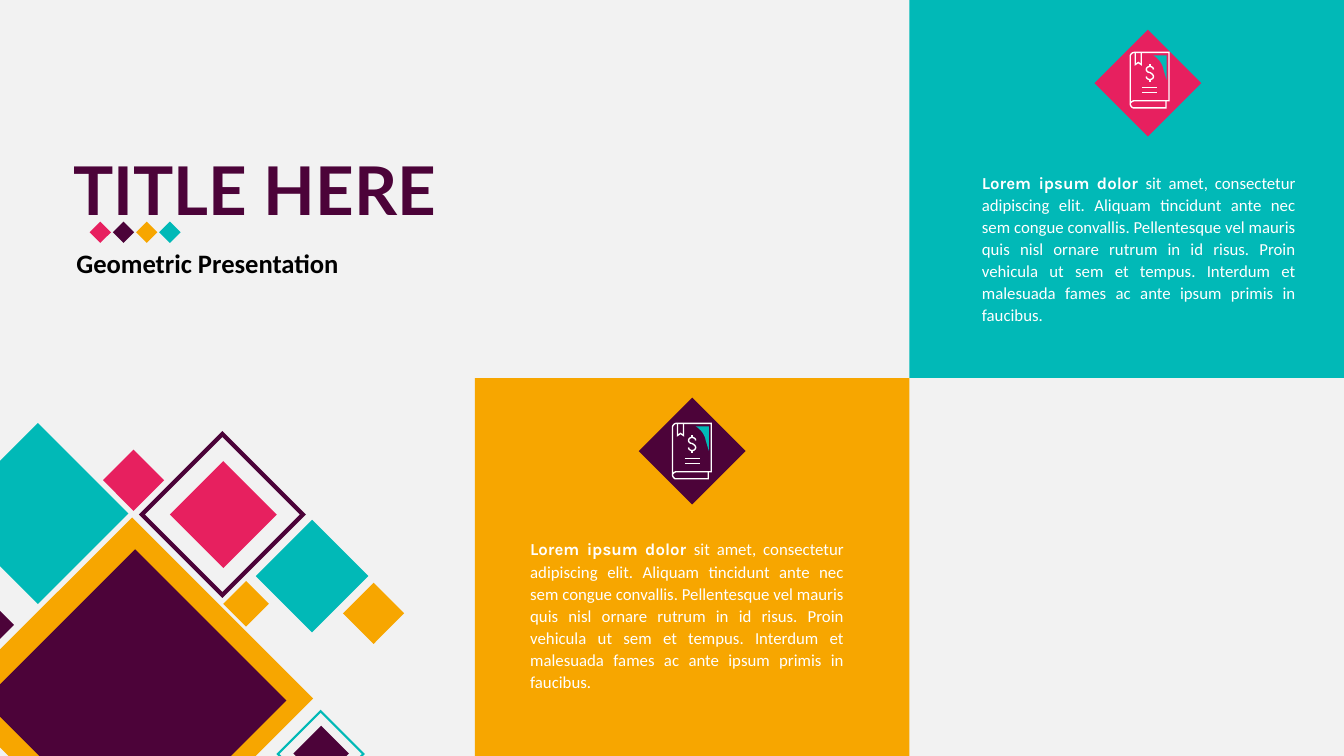
import pptx
import pptx.util
import pptx.dml.color
import pptx.enum.shapes
import pptx.enum.text
import pptx.oxml.ns
from dataclasses import dataclass
from lxml import etree

Inches = pptx.util.Inches
Pt = pptx.util.Pt
RECT = pptx.enum.shapes.MSO_SHAPE.RECTANGLE
STRAIGHT = pptx.enum.shapes.MSO_CONNECTOR.STRAIGHT
qn = pptx.oxml.ns.qn


@dataclass(frozen=True)
class Theme:
    paper: str = "F2F2F2"
    plum: str = "4C0339"
    amber: str = "F7A600"
    teal: str = "01B9B7"
    pink: str = "E7205F"
    white: str = "FFFFFF"
    black: str = "000000"
    title_font: str = "Lato"
    lead_font: str = "Karla"
    body_font: str = "Calibri"
    title_size: float = 48
    subtitle_size: float = 19
    body_size: float = 12
    icon_line: float = 1


T = Theme()

LEAD = "Lorem ipsum dolor "
BODY = ("sit amet, consectetur adipiscing elit. Aliquam tincidunt ante nec sem "
        "congue convallis. Pellentesque vel mauris quis nisl ornare rutrum in id "
        "risus. Proin vehicula ut sem et tempus. Interdum et malesuada fames ac "
        "ante ipsum primis in faucibus.")

# left, top, side, fill, line colour, line width
MOSAIC = [
    (0.04, 5.66, 2.54, T.amber, None, 0),
    (-1.02, 5.72, 0.96, T.plum, None, 0),
    (-0.26, 4.46, 1.27, T.teal, None, 0),
    (1.64, 4.54, 1.13, None, T.plum, 3),
    (2.28, 5.83, 0.32, T.amber, None, 0),
    (3.49, 5.87, 0.43, T.amber, None, 0),
    (1.11, 4.55, 0.43, T.pink, None, 0),
    (2.7, 5.32, 0.79, T.teal, None, 0),
    (2.88, 7.18, 0.6, None, T.teal, 1.5),
    (2.99, 7.28, 0.39, T.plum, None, 0),
    (0.3, 5.91, 2.08, T.plum, T.plum, 3),
    (1.84, 4.73, 0.75, T.pink, None, 0),
]

# Book icon outlines: a start point, then lines (one point) or curves (three points)
DOLLAR = [(0.16, 0.24), [(0.16, 0.26), (0.18, 0.27), (0.195, 0.27)],
          [(0.21, 0.27), (0.23, 0.26), (0.23, 0.24)],
          [(0.23, 0.22), (0.21, 0.21), (0.195, 0.2)],
          [(0.18, 0.2), (0.16, 0.19), (0.16, 0.17)],
          [(0.16, 0.15), (0.18, 0.14), (0.195, 0.14)],
          [(0.21, 0.14), (0.23, 0.15), (0.23, 0.17)]]
RIBBON = [(0.05, 0), [(0.05, 0.12)], [(0.08, 0.1)], [(0.11, 0.12)], [(0.11, 0)]]
COVER = [(0.04, 0), [(0.02, 0), (0, 0.02), (0, 0.04)], [(0, 0.51)],
         [(0, 0.5), (0.02, 0.48), (0.04, 0.48)], [(0.385, 0.48)], [(0.385, 0)]]
PAGES = [(0, 0.51), [(0, 0.53), (0.02, 0.55), (0.03, 0.55)],
         [(0.355, 0.55)], [(0.355, 0.48)]]
CORNER = [(0.36, 0.27), [(0.36, 0.03)], [(0.23, 0.03)],
          [(0.28, 0.06), (0.32, 0.11), (0.33, 0.17)]]
STROKES = [(0.195, 0.12, 0.195, 0.14), (0.195, 0.27, 0.195, 0.29),
           (0.12, 0.35, 0.27, 0.35), (0.12, 0.4, 0.27, 0.4)]


def rgb(color):
    return pptx.dml.color.RGBColor.from_string(color)


def paint(sp, fill=None, line=None, width=0):
    sp.shadow.inherit = False
    if fill:
        sp.fill.solid()
        sp.fill.fore_color.rgb = rgb(fill)
    else:
        sp.fill.background()
    if line:
        sp.line.color.rgb = rgb(line)
        sp.line.width = Pt(width)
        etree.SubElement(sp.line._get_or_add_ln(), qn("a:miter"), lim="800000")
    else:
        sp.line.fill.background()


def add_square(shapes, x, y, side, fill, line=None, width=0):
    """Add a square standing on its corner."""
    sp = shapes.add_shape(RECT, Inches(x), Inches(y), Inches(side), Inches(side))
    sp.rotation = 45
    paint(sp, fill, line, width)


def add_run(p, text, font, size, color, bold):
    r = p.add_run()
    r.text = text
    r.font.name, r.font.size, r.font.bold = font, Pt(size), bold
    r.font.color.rgb = rgb(color)


def add_text(shapes, x, y, w, h, wrap):
    """Add an empty text box and return its first paragraph."""
    tf = shapes.add_textbox(Inches(x), Inches(y), Inches(w), Inches(h)).text_frame
    tf.word_wrap = wrap
    tf.auto_size = pptx.enum.text.MSO_AUTO_SIZE.SHAPE_TO_FIT_TEXT
    return tf.paragraphs[0]


def trace(outline, steps=8):
    """Return the points of an outline, with its curves cut into short lines."""
    points = [outline[0]]
    for segment in outline[1:]:
        if len(segment) == 1:
            points += segment
            continue
        a, (b, c, d) = points[-1], segment
        for i in range(1, steps + 1):
            t = i / steps
            u = 1 - t
            points.append(tuple(u**3 * a[k] + 3*u*u*t * b[k] + 3*u*t*t * c[k] + t**3 * d[k]
                                for k in (0, 1)))
    return points


def add_outline(shapes, x, y, outline, closed, fill=None, line=None):
    points = [(Inches(x + px), Inches(y + py)) for px, py in trace(outline)]
    builder = shapes.build_freeform(*points[0])
    builder.add_line_segments(points[1:], close=closed)
    paint(builder.convert_to_shape(), fill, line, T.icon_line)


def add_book_icon(slide, x, y):
    shapes = slide.shapes.add_group_shape().shapes
    for outline, closed in ((DOLLAR, False), (RIBBON, False), (COVER, True), (PAGES, False)):
        add_outline(shapes, x, y, outline, closed, line=T.white)
    for x1, y1, x2, y2 in STROKES:
        s = shapes.add_connector(STRAIGHT, Inches(x + x1), Inches(y + y1),
                                 Inches(x + x2), Inches(y + y2))
        s.line.color.rgb = rgb(T.white)
        s.line.width = Pt(T.icon_line)
        etree.SubElement(s._element.spPr, qn("a:effectLst"))
    add_outline(shapes, x, y, CORNER, True, fill=T.teal)


def add_mosaic(slide):
    shapes = slide.shapes.add_group_shape().shapes
    for square in MOSAIC:
        add_square(shapes, *square)


def add_heading(slide, x, y):
    p = add_text(slide.shapes, x, y, 3.93, 0.91, False)
    add_run(p, "TITLE HERE", T.title_font, T.title_size, T.plum, True)
    p = add_text(slide.shapes, x + 0.03, y + 0.98, 2.84, 0.42, False)
    add_run(p, "Geometric Presentation", T.body_font, T.subtitle_size, T.black, True)
    shapes = slide.shapes.add_group_shape().shapes
    for i, color in enumerate((T.pink, T.plum, T.amber, T.teal)):
        add_square(shapes, x + 0.29 + 0.23 * i, y + 0.81, 0.15, color)


def add_panel(slide, x, y, w, h, fill, badge_fill, badge, icon, text):
    """Add a coloured panel; badge, icon and text are offsets from its corner."""
    sp = slide.shapes.add_shape(RECT, Inches(x), Inches(y), Inches(w), Inches(h))
    paint(sp, fill)
    add_square(slide.shapes, x + badge[0], y + badge[1], 0.75, badge_fill)
    p = add_text(slide.shapes, x + text[0], y + text[1], 3.31, 1.64, True)
    p.alignment = pptx.enum.text.PP_ALIGN.JUSTIFY
    p.line_spacing = 1.1
    add_run(p, LEAD, T.lead_font, T.body_size, T.white, True)
    add_run(p, BODY, T.body_font, T.body_size, T.white, False)
    add_book_icon(slide, x + icon[0], y + icon[1])


def main():
    prs = pptx.Presentation()
    prs.slide_width, prs.slide_height = Inches(13.33), Inches(7.5)
    slide = prs.slides.add_slide(prs.slide_layouts[6])
    slide.background.fill.solid()
    slide.background.fill.fore_color.rgb = rgb(T.paper)
    add_mosaic(slide)
    add_heading(slide, 0.63, 1.42)
    add_panel(slide, 4.71, 3.75, 4.31, 3.75, T.amber, T.plum,
              badge=(1.78, 0.35), icon=(1.96, 0.45), text=(0.45, 1.53))
    add_panel(slide, 9.02, 0, 4.31, 3.75, T.teal, T.pink,
              badge=(1.99, 0.45), icon=(2.19, 0.52), text=(0.62, 1.64))
    prs.save("out.pptx")


if __name__ == "__main__":
    main()
